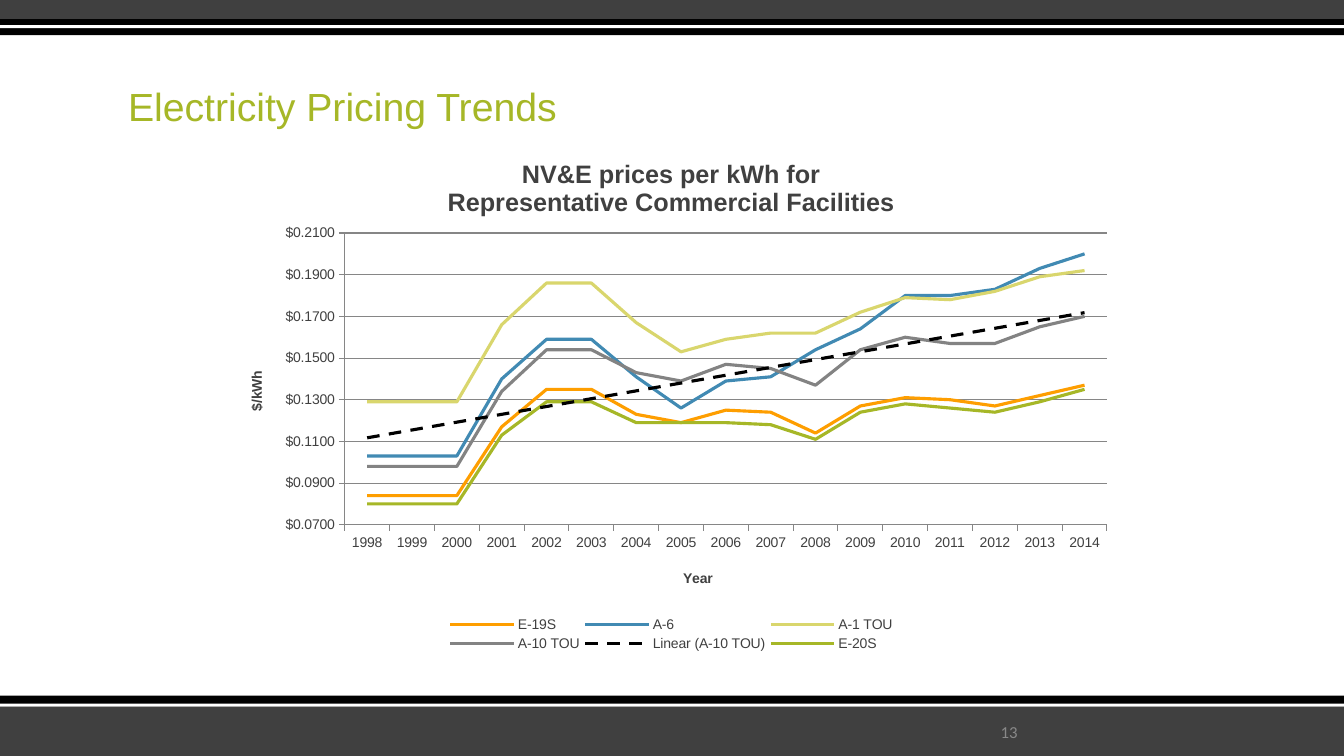
import pptx
import pptx.util
import pptx.chart.data
import pptx.dml.color
import pptx.enum.chart
import pptx.enum.dml
import pptx.enum.shapes
import pptx.enum.text
import pptx.oxml
import pptx.oxml.ns

Inches = pptx.util.Inches
Pt = pptx.util.Pt
RGBColor = pptx.dml.color.RGBColor
AXIS = pptx.enum.chart
TEXT = pptx.enum.text

DARK = RGBColor(0x40, 0x40, 0x40)
BLACK = RGBColor(0, 0, 0)
WHITE = RGBColor(0xFF, 0xFF, 0xFF)
GREEN = RGBColor(0xA6, 0xB7, 0x27)
GRAY = RGBColor(0x89, 0x89, 0x89)
GRID = RGBColor(0x86, 0x86, 0x86)
ORANGE = RGBColor(0xFE, 0x9E, 0x00)
BLUE = RGBColor(0x41, 0x8A, 0xB3)
SAND = RGBColor(0xD9, 0xD6, 0x6D)
STEEL = RGBColor(0x83, 0x83, 0x83)

WIDE, HIGH = 13.33, 7.5
BANDS = [
    (7, 0.5, DARK), (6.9, 0.11, BLACK), (6.98, 0.03, WHITE),
    (0, 0.19, DARK), (0.19, 0.16, BLACK), (0.25, 0.03, WHITE),
]
TITLE = "Electricity Pricing Trends"
NUMBER = "13"
HEAD = "NV&E prices per kWh for\nRepresentative Commercial Facilities"
YEARS = [str(year) for year in range(1998, 2015)]
RATES = [
    ("E-19S", ORANGE, (0.084, 0.084, 0.084, 0.117, 0.135, 0.135, 0.123, 0.119, 0.125,
                       0.124, 0.114, 0.127, 0.131, 0.13, 0.127, 0.132, 0.137)),
    ("A-6", BLUE, (0.103, 0.103, 0.103, 0.14, 0.159, 0.159, 0.141, 0.126, 0.139,
                   0.141, 0.154, 0.164, 0.18, 0.18, 0.183, 0.193, 0.2)),
    ("A-1 TOU", SAND, (0.129, 0.129, 0.129, 0.166, 0.186, 0.186, 0.167, 0.153, 0.159,
                       0.162, 0.162, 0.172, 0.179, 0.178, 0.182, 0.189, 0.192)),
    ("A-10 TOU", STEEL, (0.098, 0.098, 0.098, 0.134, 0.154, 0.154, 0.143, 0.139, 0.147,
                         0.145, 0.137, 0.154, 0.16, 0.157, 0.157, 0.165, 0.17)),
    ("E-20S", GREEN, (0.08, 0.08, 0.08, 0.113, 0.129, 0.129, 0.119, 0.119, 0.119,
                      0.118, 0.111, 0.124, 0.128, 0.126, 0.124, 0.129, 0.135)),
]
TREND = "A-10 TOU"
SPOTS = {
    "c:chart/c:title": (0.25, 0.04),
    "c:chart/c:plotArea": (0.14, 0.19, 0.84, 0.56),
    "c:chart/c:plotArea/c:catAx/c:title": (0.51, 0.83),
    "c:chart/c:plotArea/c:valAx/c:title": (0.03, 0.45),
    "c:chart/c:legend": (0.25, 0.92, 0.5, 0.08),
}
SCALE = {
    "minimum_scale": 0.07, "maximum_scale": 0.21, "major_unit": 0.02,
    "has_major_gridlines": True,
}
NS = pptx.oxml.ns.nsdecls("c", "a")


def apply(item, values):
    """Set each named value on the item."""
    for name, value in values.items():
        setattr(item, name, value)


def style(font, size, color, bold=False, face="Arial"):
    """Give a font its face, size, weight and colour."""
    apply(font, {"name": face, "size": Pt(size), "bold": bold})
    font.color.rgb = color


def stroke(line, color, width):
    """Give a line its colour and width."""
    line.color.rgb = color
    line.width = Pt(width)


def place(node, spot):
    """Fix a chart part at fractions of the chart's size."""
    for old in node.xpath("c:layout"):
        node.remove(old)
    target = '<c:layoutTarget val="inner"/>' if node.tag.endswith("plotArea") else ""
    modes = '<c:xMode val="edge"/><c:yMode val="edge"/>'
    sizes = "".join(f'<c:{key} val="{part}"/>' for key, part in zip("xywh", spot))
    layout = pptx.oxml.parse_xml(
        f"<c:layout {NS}><c:manualLayout>{target}{modes}{sizes}</c:manualLayout></c:layout>")
    node.insert(len(node.xpath("c:tx|c:legendPos")), layout)


def caption(holder, text, size):
    """Write a bold title on a chart or an axis."""
    holder.text_frame.text = text
    for para in holder.text_frame.paragraphs:
        style(para.font, size, DARK, True)


def add_trend(series):
    """Add a dashed linear trend line to a series."""
    trend = pptx.oxml.parse_xml(
        f"<c:trendline {NS}><c:name>Linear ({series.name})</c:name>"
        f'<c:spPr><a:ln w="{Pt(2.25)}"><a:solidFill><a:srgbClr val="{BLACK}"/></a:solidFill>'
        '<a:prstDash val="dash"/></a:ln></c:spPr><c:trendlineType val="linear"/>'
        '<c:dispRSqr val="0"/><c:dispEq val="0"/></c:trendline>')
    series._element.xpath("c:cat")[0].addprevious(trend)


def add_bands(slide):
    """Draw the bands along the top and bottom edges."""
    for top, tall, color in BANDS:
        band = slide.shapes.add_shape(
            pptx.enum.shapes.MSO_SHAPE.RECTANGLE, 0, Inches(top), Inches(WIDE), Inches(tall))
        band.shadow.inherit = False
        band.fill.solid()
        band.fill.fore_color.rgb = color
        band.line.fill.background()


def add_words(slide):
    """Write the slide title and the page number."""
    title = slide.shapes.title
    apply(title, {"left": Inches(1.17), "top": Inches(0.67),
                  "width": Inches(10), "height": Inches(0.67)})
    page = slide.shapes.add_textbox(Inches(8.74), Inches(7.13), Inches(1.45), Inches(0.25))
    rows = [
        (title, TITLE, TEXT.MSO_ANCHOR.BOTTOM, TEXT.PP_ALIGN.LEFT, 0.9, (28, GREEN)),
        (page, NUMBER, TEXT.MSO_ANCHOR.MIDDLE, TEXT.PP_ALIGN.RIGHT, 1.0,
         (12, GRAY, False, "Calibri")),
    ]
    for box, text, anchor, align, space, look in rows:
        frame = box.text_frame
        apply(frame, {"text": text, "vertical_anchor": anchor, "word_wrap": True})
        para = frame.paragraphs[0]
        apply(para, {"alignment": align, "line_spacing": space})
        style(para.runs[0].font, *look)


def add_prices(slide):
    """Chart the yearly price of each rate."""
    data = pptx.chart.data.CategoryChartData(number_format="0.000")
    data.categories = YEARS
    for name, _, prices in RATES:
        data.add_series(name, prices)
    chart = slide.shapes.add_chart(
        AXIS.XL_CHART_TYPE.LINE, Inches(2.16), Inches(1.33), Inches(9), Inches(5.17), data).chart
    style(chart.font, 10, DARK)
    apply(chart, {"has_title": True, "has_legend": True})
    apply(chart.legend, {"position": AXIS.XL_LEGEND_POSITION.BOTTOM, "include_in_layout": False})
    caption(chart.chart_title, HEAD, 18)
    for axis, text in ((chart.category_axis, "Year"), (chart.value_axis, "$/kWh")):
        caption(axis.axis_title, text, 10)
        apply(axis, {"major_tick_mark": AXIS.XL_TICK_MARK.OUTSIDE,
                     "minor_tick_mark": AXIS.XL_TICK_MARK.NONE})
        stroke(axis.format.line, GRID, 0.75)
    apply(chart.value_axis, SCALE)
    stroke(chart.value_axis.major_gridlines.format.line, GRID, 0.75)
    apply(chart.value_axis.tick_labels,
          {"number_format": '"$"0.0000', "number_format_is_linked": False})
    chart.plots[0].vary_by_categories = False
    for series, (name, color, _) in zip(chart.plots[0].series, RATES):
        series.smooth = False
        stroke(series.format.line, color, 2.25)
        if name == TREND:
            add_trend(series)
    for query, spot in SPOTS.items():
        place(chart._chartSpace.xpath(query)[0], spot)


def main():
    """Build the slide and save it."""
    deck = pptx.Presentation()
    apply(deck, {"slide_width": Inches(WIDE), "slide_height": Inches(HIGH)})
    slide = deck.slides.add_slide(deck.slide_layouts[5])
    add_bands(slide)
    add_words(slide)
    add_prices(slide)
    deck.save("out.pptx")


if __name__ == "__main__":
    main()
